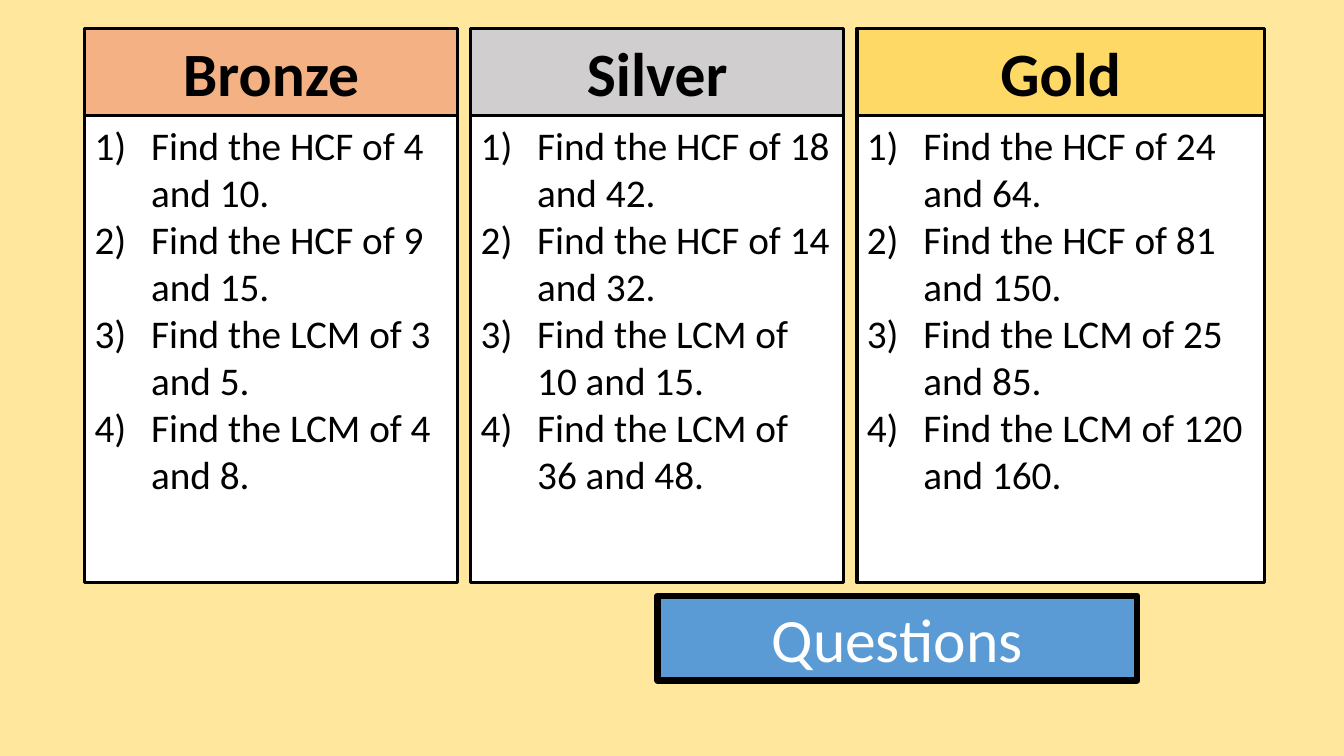
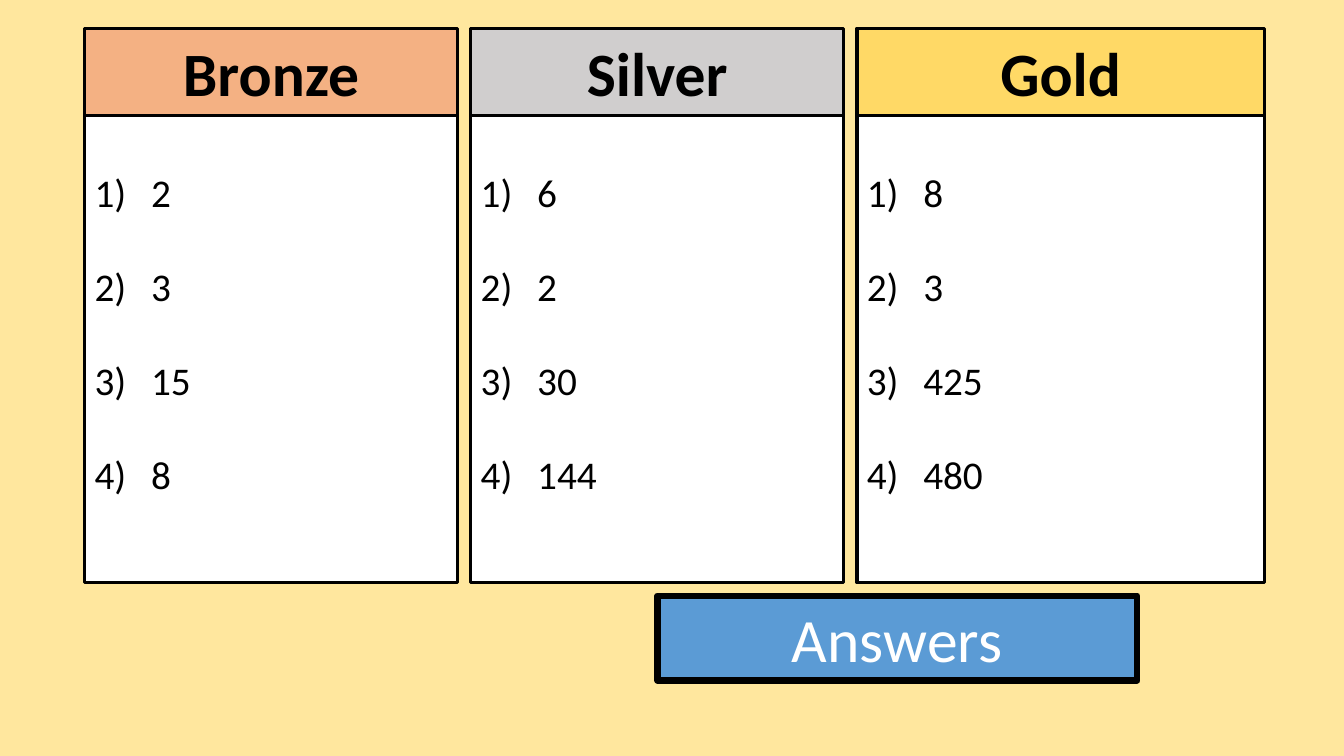
from lxml.etree import SubElement
from pptx import Presentation
from pptx.dml.color import RGBColor
from pptx.enum.shapes import MSO_SHAPE as Preset
from pptx.enum.text import MSO_ANCHOR as Anchor, MSO_AUTO_SIZE as AutoSize, PP_ALIGN as Align
from pptx.oxml.ns import qn
from pptx.util import Inches, Pt

COLOURS = {
    "background": "FFE79E",
    "Bronze": "F4B183",
    "Silver": "D0CECE",
    "Gold": "FFD966",
    "banner": "5B9BD5",
    "panel": "FFFFFF",
    "ink": "000000",
    "light": "FFFFFF",
}
FONT = "Calibri"
TITLE_ONLY = 5

LEFT, GAP = 0.84, 0.13
COLUMN_WIDTHS = {"Bronze": 3.7, "Silver": 3.7, "Gold": 4.04}
HEADER_TOP, HEADER_HEIGHT, PANEL_HEIGHT = 0.28, 0.87, 4.63
BANNER_BOX = (6.52, 5.91, 4.76, 0.84)
HANGING_INDENT = 0.56

QUESTIONS = {
    "Bronze": ["Find the HCF of 4 and 10.", "Find the HCF of 9 and 15.",
               "Find the LCM of 3 and 5.", "Find the LCM of 4 and 8."],
    "Silver": ["Find the HCF of 18 and 42.", "Find the HCF of 14 and 32.",
               "Find the LCM of 10 and 15.", "Find the LCM of 36 and 48."],
    "Gold": ["Find the HCF of 24 and 64.", "Find the HCF of 81 and 150.",
             "Find the LCM of 25 and 85.", "Find the LCM of 120 and 160."],
}
ANSWERS = {
    "Bronze": ["2", "3", "15", "8"],
    "Silver": ["6", "2", "30", "144"],
    "Gold": ["8", "3", "425", "480"],
}


def colour(name):
    return RGBColor.from_string(COLOURS[name])


def paint(shape, fill, line_width=2.25):
    shape.fill.solid()
    shape.fill.fore_color.rgb = colour(fill)
    shape.line.color.rgb = colour("ink")
    shape.line.width = Pt(line_width)


def format_text(paragraph, size, ink="ink", bold=False, align=Align.LEFT):
    paragraph.alignment = align
    for run in paragraph.runs:
        run.font.name = FONT
        run.font.size = Pt(size)
        run.font.bold = bold
        run.font.color.rgb = colour(ink)


def number(paragraph):
    """Give the paragraph automatic numbering in the form 1)."""
    properties = paragraph._p.get_or_add_pPr()
    properties.set("marL", str(Inches(HANGING_INDENT)))
    properties.set("indent", str(-Inches(HANGING_INDENT)))
    SubElement(properties, qn("a:buAutoNum"), type="arabicParenR")


def add_box(slide, box, fill):
    shape = slide.shapes.add_shape(Preset.RECTANGLE, *map(Inches, box))
    shape.shadow.inherit = False
    paint(shape, fill)
    return shape


def add_panel(slide, box, items, line_spacing):
    frame = add_box(slide, box, "panel").text_frame
    frame.vertical_anchor = Anchor.TOP
    frame.text = "\n".join(items)
    for paragraph in frame.paragraphs:
        number(paragraph)
        paragraph.line_spacing = line_spacing
        format_text(paragraph, 28)


def add_header(slide, box, medal):
    frame = add_box(slide, box, medal).text_frame
    frame.vertical_anchor = Anchor.MIDDLE
    frame.text = medal
    format_text(frame.paragraphs[0], 44, bold=True, align=Align.CENTER)


def set_banner(slide, text):
    """Turn the title placeholder into the banner below the columns."""
    banner = slide.shapes.title
    banner.left, banner.top, banner.width, banner.height = map(Inches, BANNER_BOX)
    paint(banner, "banner", line_width=4.5)
    frame = banner.text_frame
    frame.text = text
    frame.auto_size = AutoSize.NONE
    frame.vertical_anchor = Anchor.MIDDLE
    format_text(frame.paragraphs[0], 44, ink="light", align=Align.CENTER)


def add_medal_slide(presentation, title, lists, line_spacing=1.0):
    slide = presentation.slides.add_slide(presentation.slide_layouts[TITLE_ONLY])
    set_banner(slide, title)
    left = LEFT
    panel_top = HEADER_TOP + HEADER_HEIGHT
    for medal, width in COLUMN_WIDTHS.items():
        add_panel(slide, (left, panel_top, width, PANEL_HEIGHT), lists[medal], line_spacing)
        add_header(slide, (left, HEADER_TOP, width, HEADER_HEIGHT), medal)
        left += width + GAP


def main():
    presentation = Presentation()
    presentation.slide_width, presentation.slide_height = Inches(13.33), Inches(7.5)
    background = presentation.slide_master.background.fill
    background.solid()
    background.fore_color.rgb = colour("background")
    add_medal_slide(presentation, "Questions", QUESTIONS)
    add_medal_slide(presentation, "Answers", ANSWERS, line_spacing=2.0)
    presentation.save("out.pptx")


if __name__ == "__main__":
    main()
